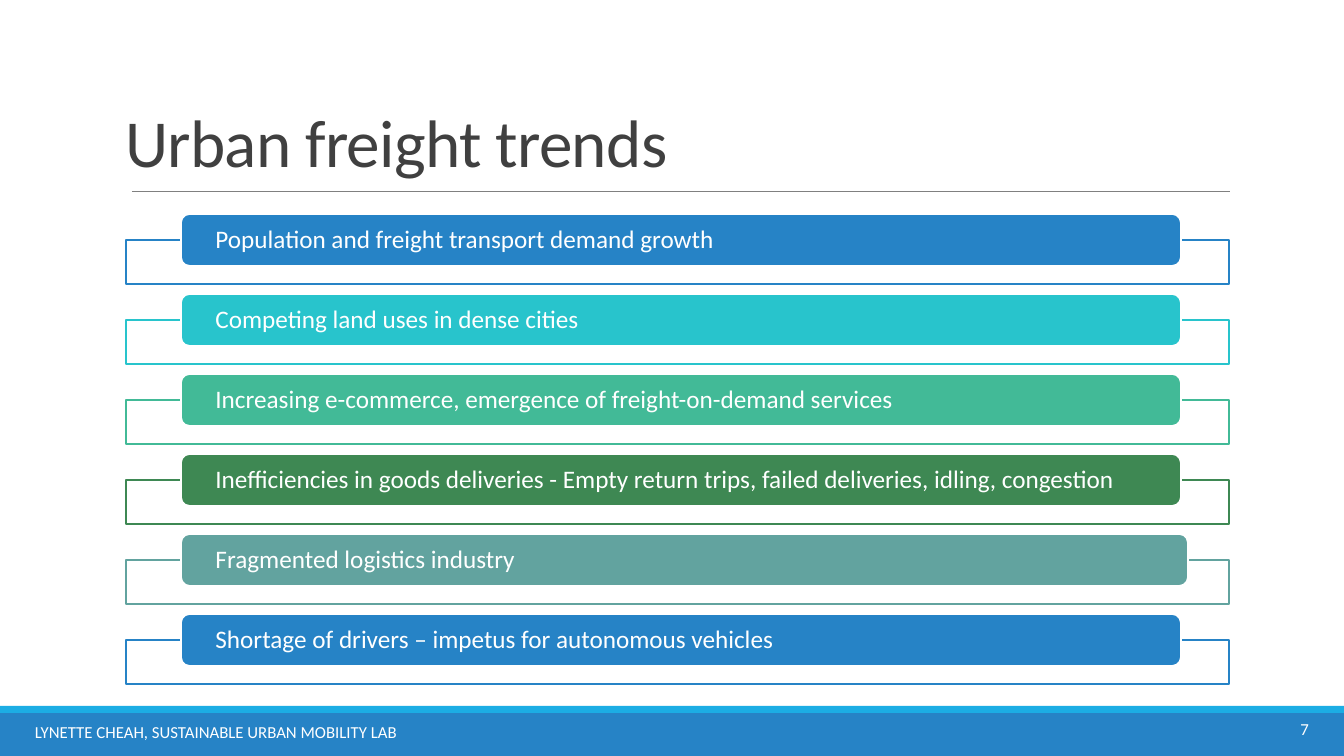
import pptx
import pptx.util
import pptx.dml.color
import pptx.enum.shapes
import pptx.enum.text
import pptx.oxml.ns
import lxml.etree

RGBColor = pptx.dml.color.RGBColor
Shape = pptx.enum.shapes.MSO_SHAPE
Align = pptx.enum.text.PP_ALIGN
Anchor = pptx.enum.text.MSO_ANCHOR

WHITE = RGBColor(0xFF, 0xFF, 0xFF)
CHARCOAL = RGBColor(0x40, 0x40, 0x40)
GREY = RGBColor(0x80, 0x80, 0x80)
SKY = RGBColor(0x1C, 0xAD, 0xE4)
BLUE = RGBColor(0x26, 0x83, 0xC6)
TURQUOISE = RGBColor(0x28, 0xC4, 0xCC)
MINT = RGBColor(0x42, 0xBA, 0x97)
GREEN = RGBColor(0x3E, 0x88, 0x53)
SAGE = RGBColor(0x62, 0xA3, 0x9F)

EMU_PER_PX = 914400 / 100.8
SLIDE_WIDTH, SLIDE_HEIGHT = 1344, 756
TREND_PITCH = 80
BAR_WIDTH = 1000

TRENDS = [
    ("Population and freight transport demand growth", BLUE, BAR_WIDTH),
    ("Competing land uses in dense cities", TURQUOISE, BAR_WIDTH),
    ("Increasing e-commerce, emergence of freight-on-demand services", MINT, BAR_WIDTH),
    ("Inefficiencies in goods deliveries - Empty return trips, failed deliveries, idling, congestion",
     GREEN, BAR_WIDTH),
    ("Fragmented logistics industry", SAGE, BAR_WIDTH + 7),
    ("Shortage of drivers – impetus for autonomous vehicles", BLUE, BAR_WIDTH),
]


def px(length):
    return pptx.util.Emu(round(length * EMU_PER_PX))


class TrendSlide:
    font_name = "Calibri"

    def __init__(self, presentation):
        self.slide = presentation.slides.add_slide(presentation.slide_layouts[5])
        self.shapes = self.slide.shapes

    def set_text(self, holder, text, size, color, align=Align.LEFT, anchor=Anchor.MIDDLE,
                 spacing=1.0, side_inset=10, edge_inset=5):
        frame = holder.text_frame
        frame.text = text
        frame.word_wrap = True
        frame.auto_size = pptx.enum.text.MSO_AUTO_SIZE.NONE
        frame.vertical_anchor = anchor
        frame.margin_left = frame.margin_right = px(side_inset)
        frame.margin_top = frame.margin_bottom = px(edge_inset)
        paragraph = frame.paragraphs[0]
        paragraph.alignment = align
        paragraph.line_spacing = spacing
        run = paragraph.runs[0]
        run.font.name = self.font_name
        run.font.size = pptx.util.Pt(size)
        run.font.color.rgb = color
        return run

    def title(self, text, left, top, width, height):
        heading = self.shapes.title
        heading.left, heading.top = px(left), px(top)
        heading.width, heading.height = px(width), px(height)
        run = self.set_text(heading, text, 48, CHARCOAL, anchor=Anchor.BOTTOM, spacing=0.85)
        run._r.get_or_add_rPr().set("spc", "-50")

    def label(self, text, left, top, width, height, align=Align.LEFT):
        caption = self.shapes.add_textbox(px(left), px(top), px(width), px(height))
        self.set_text(caption, text, 12, WHITE, align)

    def panel(self, kind, left, top, width, height, fill, outline=None):
        block = self.shapes.add_shape(kind, px(left), px(top), px(width), px(height))
        block.shadow.inherit = False
        block.fill.solid()
        block.fill.fore_color.rgb = fill
        if outline is None:
            block.line.fill.background()
        else:
            block.line.color.rgb = outline
            block.line.width = pptx.util.Pt(1.25)
        return block

    def rule(self, left, right, y):
        divider = self.shapes.add_connector(
            pptx.enum.shapes.MSO_CONNECTOR.STRAIGHT, px(left), px(y), px(right), px(y))
        divider.line.color.rgb = GREY
        divider.line.width = pptx.util.Pt(0.5)
        lxml.etree.SubElement(divider._element.spPr, pptx.oxml.ns.qn("a:effectLst"))

    def trend(self, text, color, top, bar_width):
        self.panel(Shape.RECTANGLE, 126, top + 26, 1103, 44, WHITE, color)
        bar = self.panel(Shape.ROUNDED_RECTANGLE, 181, top, bar_width, 52, color, WHITE)
        self.set_text(bar, text, 18, WHITE, spacing=0.9, side_inset=32, edge_inset=0)


def main():
    presentation = pptx.Presentation()
    presentation.slide_width = px(SLIDE_WIDTH)
    presentation.slide_height = px(SLIDE_HEIGHT)
    page = TrendSlide(presentation)

    page.panel(Shape.RECTANGLE, 0, 713, SLIDE_WIDTH, SLIDE_HEIGHT - 713, BLUE)
    page.panel(Shape.RECTANGLE, 0, 706, SLIDE_WIDTH, 7, SKY)
    page.rule(132, 1230, 191)
    page.title("Urban freight trends", 115, 21, 866, 165)
    for row, (text, color, bar_width) in enumerate(TRENDS):
        page.trend(text, color, 214 + row * TREND_PITCH, bar_width)
    page.label("LYNETTE CHEAH, SUSTAINABLE URBAN MOBILITY LAB", 25, 712, 531, 40)
    page.label("7", 1175, 709, 144, 40, Align.RIGHT)

    presentation.save("out.pptx")


if __name__ == "__main__":
    main()
